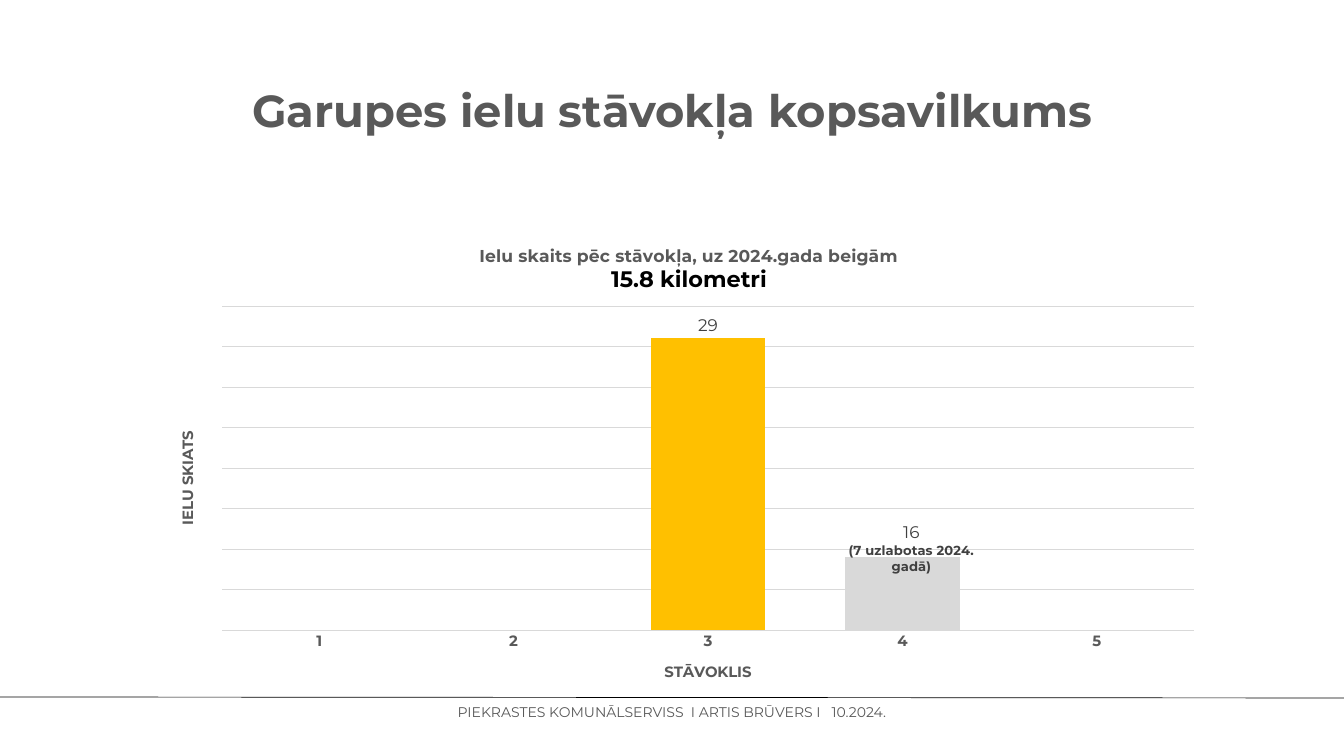
from lxml import etree
from pptx import Presentation
from pptx.chart.data import CategoryChartData
from pptx.dml.color import RGBColor
from pptx.enum.chart import XL_CHART_TYPE, XL_LABEL_POSITION, XL_TICK_LABEL_POSITION, XL_TICK_MARK
from pptx.enum.shapes import MSO_CONNECTOR
from pptx.enum.text import MSO_ANCHOR, PP_ALIGN
from pptx.oxml.ns import qn
from pptx.util import Pt

COLUMN = XL_CHART_TYPE.COLUMN_CLUSTERED
OUTSIDE = XL_LABEL_POSITION.OUTSIDE_END
NEXT_TO_AXIS = XL_TICK_LABEL_POSITION.NEXT_TO_AXIS
NO_TICK = XL_TICK_MARK.NONE
STRAIGHT = MSO_CONNECTOR.STRAIGHT
MIDDLE, TOP = MSO_ANCHOR.MIDDLE, MSO_ANCHOR.TOP
CENTER = PP_ALIGN.CENTER

PX = 914400 / 67.2
FONT = "Montserrat"
BLACK = RGBColor(0x00, 0x00, 0x00)
DARK = RGBColor(0x40, 0x40, 0x40)
GREY = RGBColor(0x59, 0x59, 0x59)
LIGHT = RGBColor(0xD9, 0xD9, 0xD9)
BLUE = RGBColor(0x44, 0x72, 0xC4)
AMBER = RGBColor(0xFF, 0xC0, 0x00)


def px(*lengths):
    return [round(n * PX) for n in lengths]


def write(tf, lines):
    """Fill a text frame with (text, size, bold, colour) paragraphs."""
    for i, (text, size, bold, color) in enumerate(lines):
        p = tf.paragraphs[0] if i == 0 else tf.add_paragraph()
        p.alignment = CENTER
        r = p.add_run()
        r.text = text
        for font in (p.font, r.font):
            font.name, font.size, font.bold = FONT, Pt(size), bold
            font.color.rgb = color


prs = Presentation()
prs.slide_width, prs.slide_height = px(1344, 756)
s = prs.slides.add_slide(prs.slide_layouts[6])

# Title and footer
for box, anchor, spacing, line in (
    ((93, 40, 1159, 146), MIDDLE, 0.9,
     ("Garupes ielu stāvokļa kopsavilkums", 48, True, GREY)),
    ((7, 703, 1330, 17), TOP, Pt(18),
     ("PIEKRASTES KOMUNĀLSERVISS  I ARTIS BRŪVERS I   10.2024.", 15, False, GREY)),
):
    tf = s.shapes.add_textbox(*px(*box)).text_frame
    tf.word_wrap = True
    tf.vertical_anchor = anchor
    tf.margin_left = tf.margin_right = tf.margin_top = tf.margin_bottom = 0
    write(tf, [line])
    tf.paragraphs[0].line_spacing = spacing

# Chart
data = CategoryChartData()
data.categories = ["1", "2", "3", "4", "5"]
data.add_series("Series 1", (None, None, 36, 9, None))
chart = s.shapes.add_chart(COLUMN, *px(163, 229, 1052, 468), data).chart
chart.has_legend = False
chart.font.name, chart.font.size = FONT, Pt(10)
write(chart.chart_title.text_frame, [
    ("Ielu skaits pēc stāvokļa, uz 2024.gada beigām", 18.4, True, GREY),
    ("15.8 kilometri", 24, True, BLACK),
])
chart.chart_title.include_in_layout = False

# Axes
cat, val = chart.category_axis, chart.value_axis
write(cat.axis_title.text_frame, [("STĀVOKLIS", 16, True, GREY)])
write(val.axis_title.text_frame, [("IELU SKIATS", 16, True, GREY)])
cat.major_tick_mark = NO_TICK
cat.tick_label_position = NEXT_TO_AXIS
cat.format.line.fill.background()
font = cat.tick_labels.font
font.name, font.size, font.bold = FONT, Pt(16), True
font.color.rgb = GREY
val.visible = False
val.major_tick_mark = NO_TICK
val.minimum_scale, val.maximum_scale, val.major_unit = 0, 40, 5
val.major_gridlines.format.line.color.rgb = LIGHT
val.major_gridlines.format.line.width = Pt(0.75)

# Columns and their labels
plot = chart.plots[0]
plot.gap_width = 70
plot.vary_by_categories = False
ser = plot.series[0]
ser.format.fill.solid()
ser.format.fill.fore_color.rgb = BLUE
labels = ser.data_labels
labels.show_value = True
labels.position = OUTSIDE
labels.font.name, labels.font.size, labels.font.bold = FONT, Pt(18), True
labels.font.color.rgb = DARK
for i, color, lines in (
    (2, AMBER, [("29", 18, False, DARK)]),
    (3, LIGHT, [("16", 18, False, DARK),
                ("(7 uzlabotas 2024. gadā)", 14, True, DARK)]),
):
    point = ser.points[i]
    point.format.fill.solid()
    point.format.fill.fore_color.rgb = color
    write(point.data_label.text_frame, lines)
    point.data_label.position = OUTSIDE

# Manual places of the plot area and the second label, as shares of the chart
plot_area = chart._chartSpace.chart.plotArea
label = plot_area.findall(".//" + qn("c:dLbl"))[1]
for parent, index, settings in (
    (plot_area, 0, (("layoutTarget", "inner"), ("xMode", "edge"), ("yMode", "edge"),
                    ("x", 59 / 1052), ("y", 77 / 468),
                    ("w", 972 / 1052), ("h", 324 / 468))),
    (label, 1, (("x", 9 / 1052), ("y", 21 / 468))),
):
    for old in parent.findall(qn("c:layout")):
        parent.remove(old)
    layout = etree.Element(qn("c:layout"))
    manual = etree.SubElement(layout, qn("c:manualLayout"))
    for tag, value in settings:
        etree.SubElement(manual, qn("c:" + tag)).set("val", str(value))
    parent.insert(index, layout)

# Footer rule
rule = s.shapes.add_connector(STRAIGHT, *px(-1, 697, 1345, 698))
rule.line.color.rgb = BLACK
rule.line.width = Pt(0.75)
etree.SubElement(rule._element.spPr, qn("a:effectLst"))

prs.save("out.pptx")
